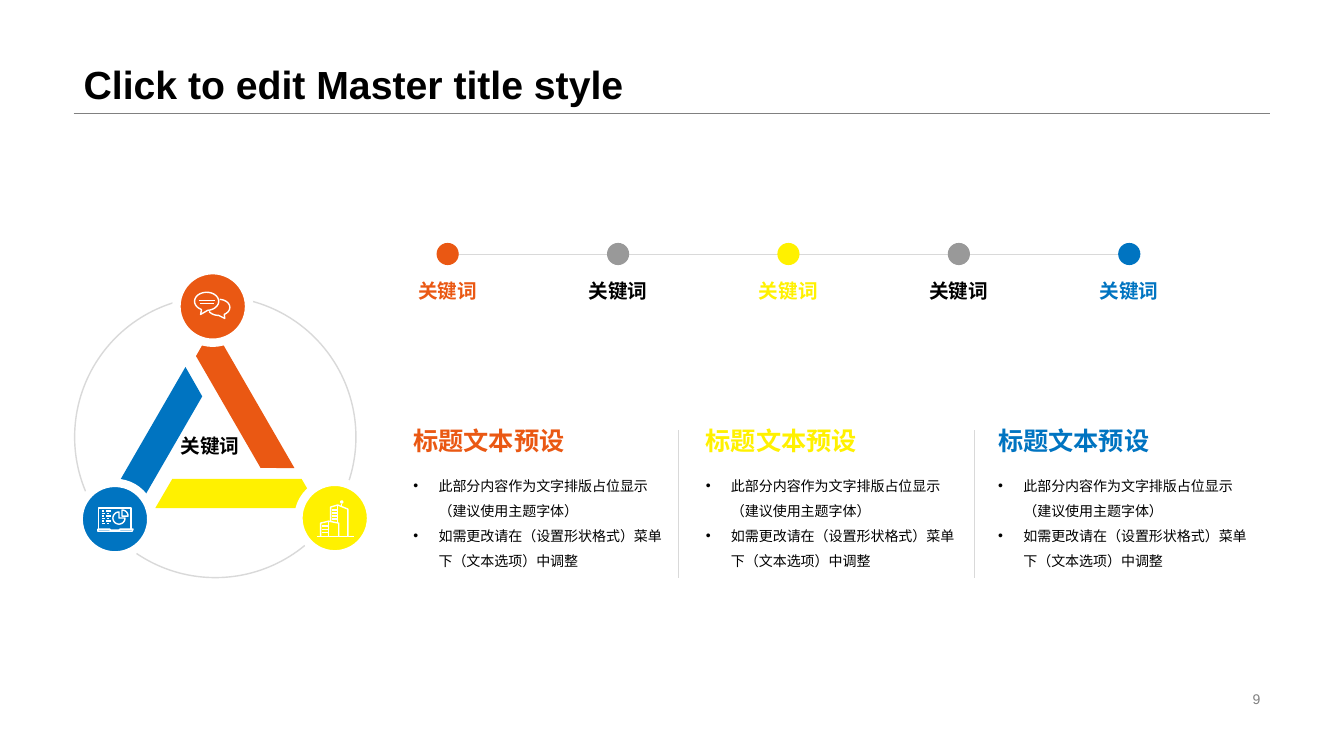
from dataclasses import dataclass
from math import cos, radians, sin

from lxml.etree import SubElement
from pptx import Presentation
from pptx.dml.color import RGBColor
from pptx.enum.shapes import MSO_CONNECTOR as Connector
from pptx.enum.shapes import MSO_SHAPE as Preset
from pptx.enum.text import MSO_ANCHOR as Anchor
from pptx.enum.text import MSO_AUTO_SIZE as AutoSize
from pptx.enum.text import PP_ALIGN as Align
from pptx.oxml.ns import qn
from pptx.shapes.autoshape import Shape
from pptx.slide import Slide
from pptx.text.text import TextFrame
from pptx.util import Inches, Pt

ORANGE, YELLOW, BLUE = "EA5813", "FFF100", "0074C1"
BLACK, WHITE, GREY, PALE = "000000", "FFFFFF", "808080", "D9D9D9"
DOT_GREY = "999999"
KEYWORD = "关键词"
BULLETS = (
    "此部分内容作为文字排版占位显示（建议使用主题字体）",
    "如需更改请在（设置形状格式）菜单下（文本选项）中调整",
)

Point = tuple[float, float]


@dataclass
class Stroke:
    points: list[Point]
    closed: bool = False


@dataclass
class Side:
    left: float
    top: float
    rotation: int
    color: str


@dataclass
class Badge:
    left: float
    top: float
    color: str
    icon: list[Stroke]


@dataclass
class Milestone:
    dot: str
    label: str


def rgb(color: str) -> RGBColor:
    return RGBColor.from_string(color)


def arc(x: float, y: float, rx: float, ry: float, start: int, end: int) -> list[Point]:
    """Points along an ellipse, in degrees clockwise from the right."""
    angles = [radians(start + (end - start) * i / 24) for i in range(25)]
    return [(x + rx * cos(a), y + ry * sin(a)) for a in angles]


def dash(left: float, right: float, y: float) -> Stroke:
    return Stroke([(left, y), (right, y)])


def add_line(page: Slide, start: Point, end: Point, color: str) -> None:
    line = page.shapes.add_connector(Connector.STRAIGHT, *map(Inches, start + end))
    line.line.color.rgb = rgb(color)
    line.line.width = Pt(0.25)
    SubElement(line._element.spPr, qn("a:effectLst"))


def add_preset(page: Slide, preset: Preset, left: float, top: float, width: float, height: float,
               fill: str = "", outline: str = "", weight: float = 0) -> Shape:
    shape = page.shapes.add_shape(preset, *map(Inches, (left, top, width, height)))
    shape.shadow.inherit = False
    if fill:
        shape.fill.solid()
        shape.fill.fore_color.rgb = rgb(fill)
    else:
        shape.fill.background()
    if outline:
        shape.line.color.rgb = rgb(outline)
        shape.line.width = Pt(weight)
    else:
        shape.line.fill.background()
    return shape


def write(frame: TextFrame, texts: tuple[str, ...], size: int, color: str, bold: bool = False,
          align: Align = Align.LEFT, anchor: Anchor = Anchor.MIDDLE,
          spacing: float = 1, bullets: bool = False) -> None:
    frame.word_wrap = True
    frame.auto_size = AutoSize.NONE
    frame.vertical_anchor = anchor
    for index, text in enumerate(texts):
        para = frame.add_paragraph() if index else frame.paragraphs[0]
        para.text = text
        if bullets:
            props = para._p.get_or_add_pPr()
            props.set("marL", str(Inches(0.25)))
            props.set("indent", str(-Inches(0.25)))
            SubElement(props, qn("a:buFont"), typeface="Arial")
            SubElement(props, qn("a:buChar"), char="•")
        para.alignment = align
        para.line_spacing = spacing
        para.space_before = Pt(0)
        para.font.name = "Arial"
        para.font.size = Pt(size)
        para.font.bold = bold
        para.font.color.rgb = rgb(color)


def place(shape: Shape, left: float, top: float, width: float, height: float) -> None:
    shape.left, shape.top, shape.width, shape.height = map(Inches, (left, top, width, height))


def add_text(page: Slide, area: tuple[float, float, float, float], text: str, size: int,
             color: str, bold: bool = True, align: Align = Align.CENTER,
             anchor: Anchor = Anchor.MIDDLE) -> None:
    box = page.shapes.add_textbox(*map(Inches, area))
    write(box.text_frame, (text,), size, color, bold, align, anchor)


def add_icon(page: Slide, strokes: list[Stroke]) -> None:
    paths = [[(Inches(x), Inches(y)) for x, y in stroke.points] for stroke in strokes]
    builder = page.shapes.build_freeform(*paths[0][0])
    for index, (path, stroke) in enumerate(zip(paths, strokes)):
        if index:
            builder.move_to(*path[0])
        builder.add_line_segments(path[1:], close=stroke.closed)
    icon = builder.convert_to_shape()
    icon.shadow.inherit = False
    icon.fill.background()
    icon.line.color.rgb = rgb(WHITE)
    icon.line.width = Pt(1)


CHAT = [
    Stroke(arc(2.05, 2.99, 0.12, 0.09, 115, 445) + [(1.99, 3.12)], True),
    Stroke(arc(2.17, 3.05, 0.11, 0.08, -85, 60) + [(2.23, 3.16)]
           + arc(2.17, 3.05, 0.11, 0.08, 90, 150)),
    dash(1.97, 2.13, 2.98),
    dash(1.98, 2.12, 3.01),
]
LAPTOP = [
    Stroke([(0.98, 5.25), (0.98, 5.04), (1.3, 5.04), (1.3, 5.25)]),
    Stroke([(0.97, 5.25), (1.09, 5.25), (1.1, 5.26), (1.18, 5.26), (1.19, 5.25),
            (1.32, 5.25), (1.31, 5.27), (0.97, 5.27)], True),
    Stroke(arc(1.18, 5.14, 0.06, 0.06, 0, 270) + [(1.18, 5.14)], True),
    Stroke(arc(1.21, 5.12, 0.06, 0.06, -90, 0) + [(1.21, 5.12)], True),
]
for row in range(6):
    split = 0.01 * (row % 2)
    LAPTOP += [dash(1.01, 1.03 + split, 5.07 + 0.025 * row),
               dash(1.05 + split, 1.1 - 2 * split, 5.07 + 0.025 * row)]
BUILDINGS = [
    dash(3.14, 3.51, 5.32),
    Stroke([(3.18, 5.32), (3.18, 5.19), (3.26, 5.17), (3.36, 5.19), (3.36, 5.32)]),
    Stroke([(3.26, 5.17), (3.26, 5.32)]),
    Stroke([(3.28, 5.17), (3.28, 5.03), (3.35, 5.01), (3.45, 5.05), (3.45, 5.32)]),
    Stroke([(3.35, 5.01), (3.35, 5.19)]),
    Stroke([(3.39, 5.02), (3.39, 5)]),
    Stroke(arc(3.39, 4.98, 0.01, 0.01, 0, 360), True),
]
BUILDINGS += [dash(3.19, 3.25, 5.22 + 0.03 * floor) for floor in range(3)]
BUILDINGS += [dash(3.29, 3.34, 5.06 + 0.03 * floor) for floor in range(4)]

SIDES = [Side(1.58, 3.87, 240, ORANGE), Side(1.54, 4.75, 0, YELLOW), Side(0.75, 4.27, 120, BLUE)]
BADGES = [Badge(1.75, 2.68, ORANGE, CHAT), Badge(0.78, 4.79, BLUE, LAPTOP),
          Badge(2.96, 4.78, YELLOW, BUILDINGS)]
MILESTONES = [Milestone(ORANGE, ORANGE), Milestone(DOT_GREY, BLACK), Milestone(YELLOW, YELLOW),
              Milestone(DOT_GREY, BLACK), Milestone(BLUE, BLUE)]


def add_triangle(page: Slide) -> None:
    add_preset(page, Preset.OVAL, 0.74, 2.94, 2.79, 2.79, outline=PALE, weight=1)
    for side in SIDES:
        bar = add_preset(page, Preset.TRAPEZOID, side.left, side.top, 1.62, 0.29, side.color)
        bar.adjustments[0] = 0.584
        bar.rotation = side.rotation
    for badge in BADGES:
        add_preset(page, Preset.OVAL, badge.left, badge.top, 0.72, 0.72, badge.color, WHITE, 6)
        add_icon(page, badge.icon)
    add_text(page, (1.26, 4.1, 1.65, 0.64), KEYWORD, 14, BLACK)


def add_timeline(page: Slide) -> None:
    add_line(page, (4.44, 2.52), (11.2, 2.52), PALE)
    for index, milestone in enumerate(MILESTONES):
        shift = 1.69 * index
        add_preset(page, Preset.OVAL, 4.33 + shift, 2.41, 0.22, 0.22, milestone.dot)
        add_text(page, (3.96 + shift, 2.68, 0.96, 0.4), KEYWORD, 14, milestone.label)


def add_columns(page: Slide) -> None:
    lists = [page.placeholders[idx] for idx in (1, 2, 3)]
    for index, (body, color) in enumerate(zip(lists, (ORANGE, YELLOW, BLUE))):
        left = 4 + 2.9 * index
        place(body, left, 4.6, 2.79, 1.41)
        write(body.text_frame, BULLETS, 10, BLACK, anchor=Anchor.TOP, spacing=1.5, bullets=True)
        add_text(page, (left, 4.01, 2.79, 0.56), "标题文本预设", 18, color,
                 align=Align.LEFT, anchor=Anchor.BOTTOM)
    for x in (6.73, 9.66):
        add_line(page, (x, 4.27), (x, 5.73), PALE)


def main() -> None:
    deck = Presentation()
    deck.slide_width, deck.slide_height = Inches(13.33), Inches(7.5)
    page = deck.slides.add_slide(deck.slide_layouts.get_by_name("Comparison"))
    spare = page.placeholders[4]._element
    spare.getparent().remove(spare)

    title = page.shapes.title
    place(title, 0.73, 0, 11.87, 1.12)
    write(title.text_frame, ("Click to edit Master title style",), 28, BLACK, True,
          anchor=Anchor.BOTTOM, spacing=0.9)
    add_line(page, (0.73, 1.12), (12.6, 1.12), GREY)
    add_triangle(page)
    add_timeline(page)
    add_columns(page)
    add_text(page, (9.42, 6.82, 3.18, 0.23), "9", 10, GREY, False, Align.RIGHT)
    deck.save("out.pptx")


if __name__ == "__main__":
    main()
